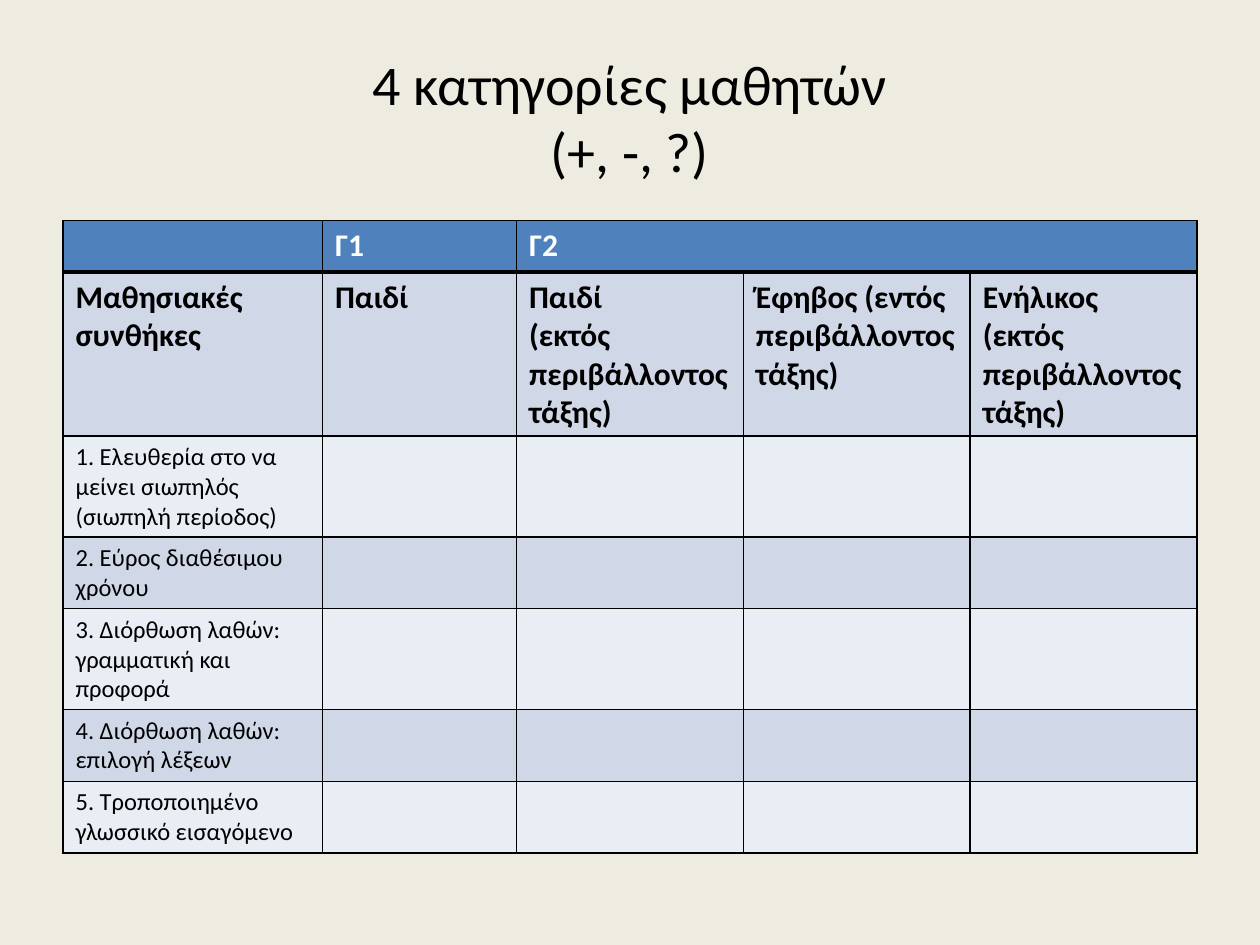
from lxml import etree
from pptx import Presentation
from pptx.dml.color import RGBColor
from pptx.enum.text import MSO_ANCHOR, PP_ALIGN
from pptx.oxml.ns import qn
from pptx.util import Inches, Pt

CENTER = PP_ALIGN.CENTER
MIDDLE = MSO_ANCHOR.MIDDLE

FONT = "Calibri"
BLACK, WHITE = "000000", "FFFFFF"
BACKGROUND, HEADER_FILL = "EEECE1", "4F81BD"
BAND_FILLS = ["E9EDF4", "D0D8E8"]

TITLE_LINES = ["4 κατηγορίες μαθητών", "(+, -, ?)"]
LANGUAGES = ["", "Γ1", "Γ2", "", ""]
LEARNERS = [
    "Μαθησιακές συνθήκες",
    "Παιδί",
    "Παιδί\n(εκτός περιβάλλοντος τάξης)",
    "Έφηβος (εντός περιβάλλοντος τάξης)",
    "Ενήλικος\n(εκτός περιβάλλοντος τάξης)",
]
CONDITIONS = [
    "1. Ελευθερία στο να μείνει σιωπηλός (σιωπηλή περίοδος)",
    "2. Εύρος διαθέσιμου χρόνου",
    "3. Διόρθωση λαθών: γραμματική και προφορά",
    "4. Διόρθωση λαθών: επιλογή λέξεων",
    "5. Τροποποιημένο γλωσσικό εισαγόμενο",
]
ROWS = [LANGUAGES, LEARNERS] + [[condition, "", "", "", ""] for condition in CONDITIONS]
COLUMN_WIDTHS = [2.06, 1.54, 1.8, 1.8, 1.8]
ROW_HEIGHTS = [0.41, 1.3, 0.8, 0.57, 0.8, 0.57, 0.57]


def rgb(color):
    return RGBColor.from_string(color)


def add_run(paragraph, text, size, color=BLACK, bold=False):
    run = paragraph.add_run()
    run.text = text
    run.font.name = FONT
    run.font.size = Pt(size)
    run.font.bold = bold
    run.font.color.rgb = rgb(color)


def add_border(cell, side, width):
    line = etree.SubElement(cell._tc.get_or_add_tcPr(), qn(f"a:ln{side}"), w=str(Pt(width)))
    fill = etree.SubElement(line, qn("a:solidFill"))
    etree.SubElement(fill, qn("a:srgbClr"), val=BLACK)


def add_title(slide):
    box = slide.shapes.add_textbox(Inches(0.5), Inches(0.3), Inches(9), Inches(1.25))
    frame = box.text_frame
    frame.word_wrap = True
    frame.vertical_anchor = MIDDLE
    paragraph = frame.paragraphs[0]
    paragraph.alignment = CENTER
    for number, line in enumerate(TITLE_LINES):
        if number:
            paragraph.add_line_break()
        add_run(paragraph, line, 32)


def fill_cell(cell, text, row):
    # Borders come before the fill in the cell properties; a thick rule closes the header.
    for side in "LRTB":
        header_rule = (row, side) in [(0, "B"), (1, "T")]
        add_border(cell, side, 3 if header_rule else 1)
    cell.fill.solid()
    cell.fill.fore_color.rgb = rgb(BAND_FILLS[row % 2] if row else HEADER_FILL)
    if not text:
        return
    frame = cell.text_frame
    heading = row < 2
    for number, line in enumerate(text.split("\n")):
        paragraph = frame.add_paragraph() if number else frame.paragraphs[0]
        add_run(paragraph, line, 18 if heading else 14, BLACK if row else WHITE, heading)


def add_conditions_table(slide):
    table = slide.shapes.add_table(
        len(ROWS), len(COLUMN_WIDTHS), Inches(0.5), Inches(1.75),
        Inches(sum(COLUMN_WIDTHS)), Inches(sum(ROW_HEIGHTS))).table
    for column, width in zip(table.columns, COLUMN_WIDTHS):
        column.width = Inches(width)
    for table_row, height in zip(table.rows, ROW_HEIGHTS):
        table_row.height = Inches(height)
    table.cell(0, 2).merge(table.cell(0, 4))
    for row, texts in enumerate(ROWS):
        for column, text in enumerate(texts):
            fill_cell(table.cell(row, column), text, row)


def main():
    prs = Presentation()
    prs.slide_width, prs.slide_height = Inches(10), Inches(7.5)
    slide = prs.slides.add_slide(prs.slide_layouts[6])
    slide.background.fill.solid()
    slide.background.fill.fore_color.rgb = rgb(BACKGROUND)
    add_title(slide)
    add_conditions_table(slide)
    prs.save("out.pptx")


if __name__ == "__main__":
    main()
